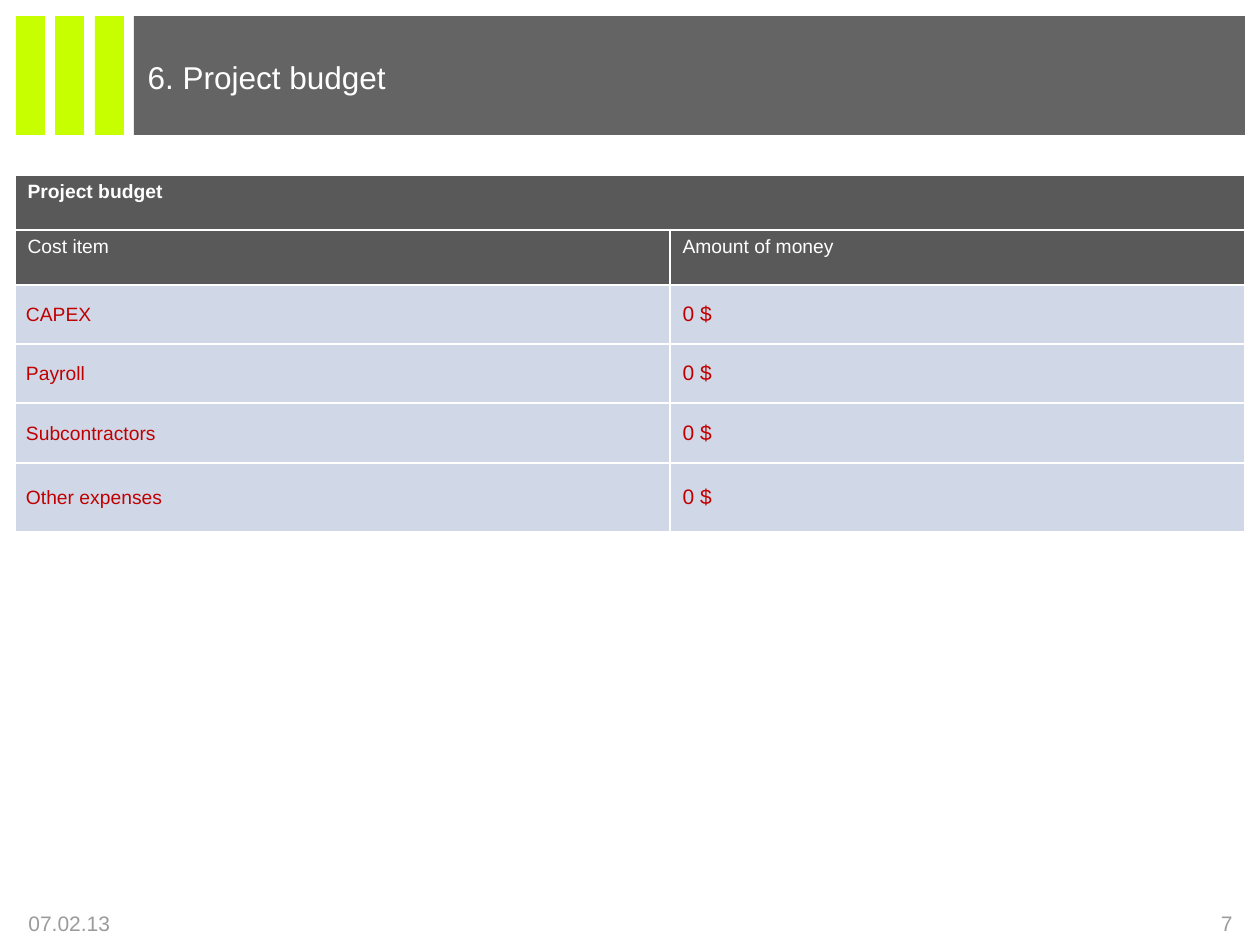
"""Build the project budget slide."""
from lxml import etree
from pptx import Presentation, util as u
from pptx.dml.color import RGBColor
from pptx.enum import shapes, text
from pptx.oxml.ns import qn

PX = 914400 / 126
COLORS = {"banner": "646464", "accent": "C8FF00", "footer": "9B9B9B", "white": "FFFFFF",
          "header": "595959", "body": "D0D8E8", "item": "C00000"}
COLS = [655, 575]
ROWS = [55, 55, 59, 59, 60, 69]
COSTS = [("CAPEX", "0 $"), ("Payroll", "0 $"), ("Subcontractors", "0 $"), ("Other expenses", "0 $")]


def px(n):
    """Convert pixels to EMU."""
    return u.Emu(round(n * PX))


def color(name):
    """Look up a named colour."""
    return RGBColor.from_string(COLORS[name])


def put_text(tf, words, size, fill, bold=False, align=text.PP_ALIGN.LEFT):
    """Write one formatted paragraph into a text frame."""
    tf.word_wrap = True
    p = tf.paragraphs[0]
    p.alignment = align
    r = p.add_run()
    r.text = words
    r.font.name, r.font.size, r.font.bold = "Arial", u.Pt(size), bold
    r.font.color.rgb = color(fill)


def add_rect(s, x, y, w, h, fill):
    """Draw a plain filled rectangle."""
    sp = s.shapes.add_shape(shapes.MSO_SHAPE.RECTANGLE, px(x), px(y), px(w), px(h))
    sp.shadow.inherit = False
    sp.fill.solid()
    sp.fill.fore_color.rgb = color(fill)
    sp.line.fill.background()


def add_banner(s, x, y, w, h, title):
    """Place the accent bars, the banner and, in front of it, the slide title."""
    add_rect(s, x + 118, y, w - 118, h, "banner")
    for i in range(3):
        add_rect(s, x + 79 * i // 2, y, 29, h, "accent")
    sp = s.shapes.title
    sp.element.getparent().append(sp.element)
    sp.left, sp.top, sp.width, sp.height = px(x + 119), px(y + 39), px(w - 119), px(h - 40)
    tf = sp.text_frame
    tf.auto_size = text.MSO_AUTO_SIZE.NONE
    tf.vertical_anchor = text.MSO_ANCHOR.TOP
    tf.margin_top, tf.margin_bottom = px(3), 0
    put_text(tf, title, 18, "white")


def set_borders(cell, top, bottom):
    """Give a cell white borders, with its top and bottom widths in points."""
    tc_pr = cell._tc.get_or_add_tcPr()
    for i, (side, width) in enumerate([("L", 1), ("R", 1), ("T", top), ("B", bottom)]):
        ln = etree.Element(qn(f"a:ln{side}"), w=str(u.Pt(width)))
        fill = etree.SubElement(ln, qn("a:solidFill"))
        etree.SubElement(fill, qn("a:srgbClr"), val=COLORS["white"])
        tc_pr.insert(i, ln)


def add_budget(s, x, y):
    """Place the budget table."""
    table = s.shapes.add_table(len(ROWS), len(COLS), px(x), px(y),
                               px(sum(COLS)), px(sum(ROWS))).table
    for col, width in zip(table.columns, COLS):
        col.width = px(width)
    for row, height in zip(table.rows, ROWS):
        row.height = px(height)
    table.cell(0, 0).merge(table.cell(0, 1))
    rows = [("Project budget", ""), ("Cost item", "Amount of money"), *COSTS]
    for i, row in enumerate(rows):
        header = i < 2
        for j, words in enumerate(row):
            cell = table.cell(i, j)
            cell.fill.solid()
            cell.fill.fore_color.rgb = color("header" if header else "body")
            set_borders(cell, 1.5 if i == 1 else 1, 1.5 if i == 0 else 1)
            if not header:
                cell.vertical_anchor = text.MSO_ANCHOR.MIDDLE
                if j == 0:
                    cell.margin_left = px(11)
                    cell.margin_top = cell.margin_right = px(1)
                    cell.margin_bottom = 0
            if words:
                put_text(cell.text_frame, words, 11 if header or j == 0 else 12,
                         "white" if header else "item", bold=i == 0)


def add_footer(s, x, y, w, h, date, number):
    """Place the date at the left and the page number at the right."""
    for left, words, align in [(x, date, text.PP_ALIGN.LEFT),
                               (x + w - 297, number, text.PP_ALIGN.RIGHT)]:
        tf = s.shapes.add_textbox(px(left), px(y), px(297), px(h)).text_frame
        tf.vertical_anchor = text.MSO_ANCHOR.MIDDLE
        put_text(tf, words, 12, "footer", align=align)


def main():
    """Build and save the slide."""
    prs = Presentation()
    prs.slide_width, prs.slide_height = px(1260), px(945)
    s = prs.slides.add_slide(prs.slide_layouts[5])
    add_banner(s, 16, 16, 1229, 119, "6. Project budget")
    add_budget(s, 15, 175)
    add_footer(s, 16, 902, 1229, 43, "07.02.13", "7")
    prs.save("out.pptx")


if __name__ == "__main__":
    main()
